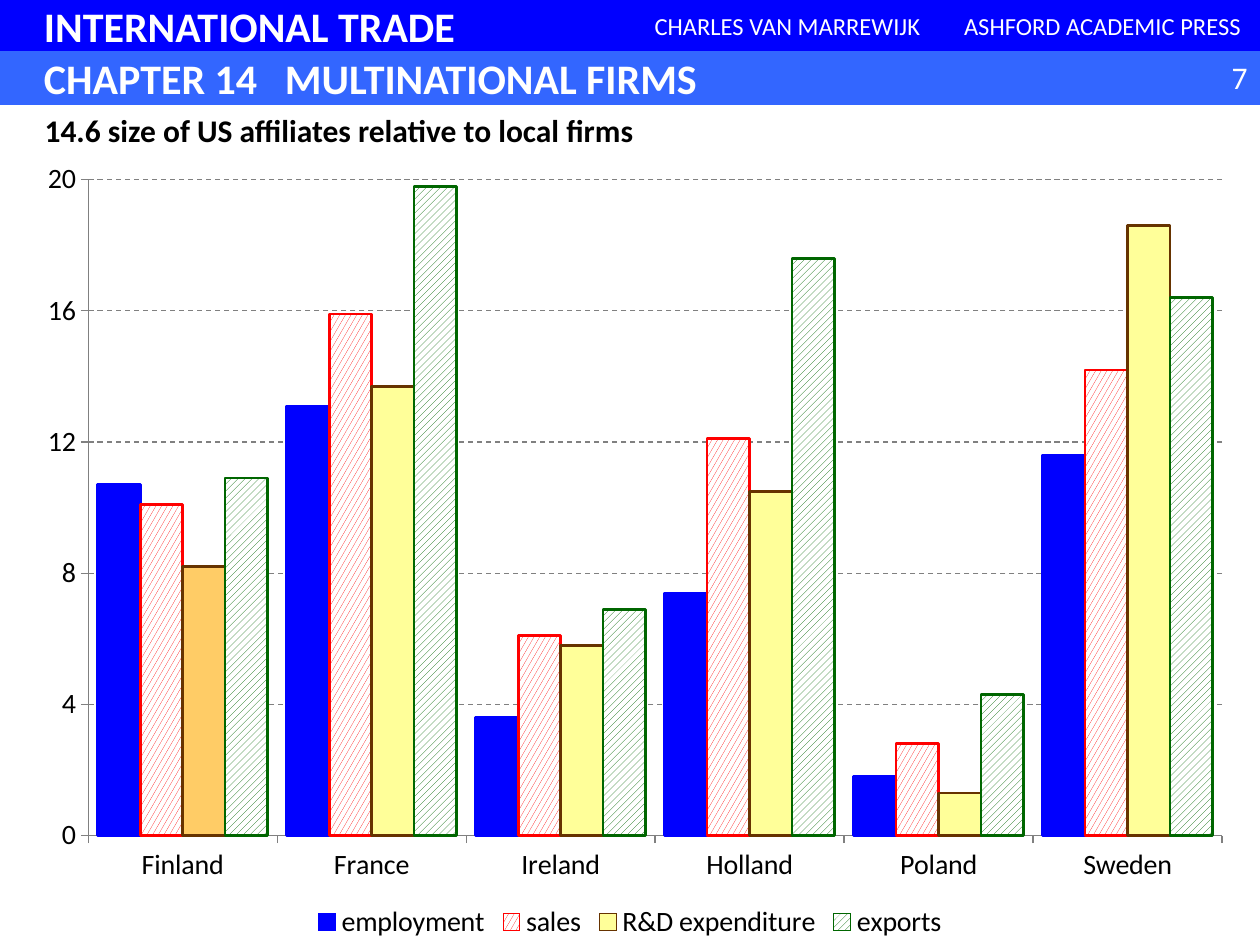
from lxml.etree import SubElement
from pptx import Presentation
from pptx.chart.data import CategoryChartData
from pptx.dml.color import RGBColor
from pptx.enum.chart import XL_CHART_TYPE, XL_LEGEND_POSITION, XL_TICK_MARK
from pptx.enum.dml import MSO_LINE, MSO_PATTERN
from pptx.enum.shapes import MSO_SHAPE
from pptx.enum.text import MSO_ANCHOR, MSO_AUTO_SIZE, PP_ALIGN
from pptx.oxml import parse_xml
from pptx.oxml.ns import nsdecls, qn
from pptx.util import Emu, Pt

WIDTH, HEIGHT = 1260, 945
BAND = 52
INDENT = 44
BLUE, LIGHT_BLUE, WHITE, BLACK, GREY = "0000FF", "3366FF", "FFFFFF", "000000", "808080"

COUNTRIES = ["Finland", "France", "Ireland", "Holland", "Poland", "Sweden"]
# name, values, fill, line, pattern
SERIES = [
    ("employment", [10.7, 13.1, 3.6, 7.4, 1.8, 11.6], BLUE, BLUE, None),
    ("sales", [10.1, 15.9, 6.1, 12.1, 2.8, 14.2], "FF0000", "FF0000",
     MSO_PATTERN.LARGE_CONFETTI),
    ("R&D expenditure", [8.2, 13.7, 5.8, 10.5, 1.3, 18.6], "FFFF99", "663300", None),
    ("exports", [10.9, 19.8, 6.9, 17.6, 4.3, 16.4], "006600", "006600",
     MSO_PATTERN.WIDE_UPWARD_DIAGONAL),
]


def px(length):
    return Emu(round(length * 914400 / 126))


def rgb(color):
    return RGBColor.from_string(color)


class SlideBuilder:
    """Holds the slide and the font shared by all its elements."""

    def __init__(self, slide, font_name="Calibri"):
        self.slide = slide
        self.font_name = font_name

    def style_font(self, font, size, color, bold=False):
        font.name = self.font_name
        font.size = Pt(size)
        font.bold = bold
        font.color.rgb = rgb(color)

    def set_text(self, shape, text, size, color, align, bold=False):
        paragraph = shape.text_frame.paragraphs[0]
        paragraph.text = text
        paragraph.alignment = align
        self.style_font(paragraph.font, size, color, bold)
        return paragraph

    def band(self, box, fill, text, size, align=PP_ALIGN.CENTER, bold=False, indent=0, tab=None):
        shape = self.slide.shapes.add_shape(MSO_SHAPE.RECTANGLE, *map(px, box))
        shape.shadow.inherit = False
        shape.fill.solid()
        shape.fill.fore_color.rgb = rgb(fill)
        shape.line.color.rgb = rgb(fill)
        shape.line.width = Pt(0.75)
        frame = shape.text_frame
        frame.vertical_anchor = MSO_ANCHOR.MIDDLE
        frame.margin_left, frame.margin_right = px(indent), 0
        paragraph = self.set_text(shape, text, size, WHITE, align, bold)
        if tab:
            properties = paragraph._p.get_or_add_pPr()
            properties.insert(0, parse_xml(
                f'<a:tabLst {nsdecls("a")}><a:tab pos="{px(tab)}" algn="l"/></a:tabLst>'))

    def label(self, box, text, size, align):
        shape = self.slide.shapes.add_textbox(*map(px, box))
        shape.text_frame.word_wrap = True
        self.set_text(shape, text, size, WHITE, align)

    def title(self, box, text, size):
        """Fills the title placeholder and brings it to the front."""
        shape = self.slide.shapes.title
        shape.left, shape.top, shape.width, shape.height = map(px, box)
        frame = shape.text_frame
        frame.word_wrap = False
        frame.auto_size = MSO_AUTO_SIZE.NONE
        frame.vertical_anchor = MSO_ANCHOR.MIDDLE
        self.set_text(shape, text, size, BLACK, PP_ALIGN.LEFT, bold=True)
        self.slide.shapes[-1].element.addnext(shape.element)

    def axis(self, axis, size):
        axis.major_tick_mark = XL_TICK_MARK.OUTSIDE
        axis.minor_tick_mark = XL_TICK_MARK.NONE
        axis.format.line.color.rgb = rgb(GREY)
        axis.format.line.width = Pt(0.75)
        self.style_font(axis.tick_labels.font, size, BLACK)

    def column_chart(self, box, size, plot_area):
        data = CategoryChartData()
        data.categories = COUNTRIES
        for name, values, *_ in SERIES:
            data.add_series(name, values)
        chart = self.slide.shapes.add_chart(
            XL_CHART_TYPE.COLUMN_CLUSTERED, *map(px, box), data).chart
        self.style_font(chart.font, size, BLACK)
        chart.has_title = False
        chart.has_legend = True
        chart.legend.position = XL_LEGEND_POSITION.BOTTOM
        chart.legend.include_in_layout = False
        self.style_font(chart.legend.font, size, BLACK)

        self.axis(chart.category_axis, size)
        value_axis = chart.value_axis
        self.axis(value_axis, size)
        value_axis.minimum_scale, value_axis.maximum_scale, value_axis.major_unit = 0, 20, 4
        value_axis.tick_labels.number_format = "0"
        value_axis.tick_labels.number_format_is_linked = False
        grid_line = value_axis.major_gridlines.format.line
        grid_line.color.rgb = rgb(GREY)
        grid_line.width = Pt(0.75)
        grid_line.dash_style = MSO_LINE.DASH

        plot = chart.plots[0]
        plot.gap_width, plot.overlap = 45, 0
        plot.vary_by_categories = False
        for series, (_, _, fill, line, pattern) in zip(plot.series, SERIES):
            self.bar_format(series.format, fill, line, pattern)
        self.bar_format(plot.series[2].points[0].format, "FFCC66", "663300")
        self.place_plot(chart, plot_area)

    def bar_format(self, bar, fill, line, pattern=None):
        if pattern:
            bar.fill.patterned()
            bar.fill.pattern = pattern
            bar.fill.back_color.rgb = rgb(WHITE)
        else:
            bar.fill.solid()
        bar.fill.fore_color.rgb = rgb(fill)
        bar.line.color.rgb = rgb(line)
        bar.line.width = Pt(1.5)

    def place_plot(self, chart, plot_area):
        """Fixes the inner plot area, given as fractions of the chart."""
        area = chart.element.find(f".//{qn('c:plotArea')}") if hasattr(chart, "element") \
            else chart._chartSpace.find(f".//{qn('c:plotArea')}")
        for old in area.findall(qn("c:layout")):
            area.remove(old)
        layout = parse_xml(f'<c:layout {nsdecls("c")}><c:manualLayout/></c:layout>')
        settings = [("layoutTarget", "inner"), ("xMode", "edge"), ("yMode", "edge"),
                    *zip("xywh", plot_area)]
        for tag, value in settings:
            SubElement(layout[0], qn(f"c:{tag}")).set("val", str(value))
        area.insert(0, layout)


def main():
    presentation = Presentation()
    presentation.slide_width, presentation.slide_height = px(WIDTH), px(HEIGHT)
    builder = SlideBuilder(presentation.slides.add_slide(presentation.slide_layouts[5]))

    quarter = WIDTH // 4
    builder.band((0, 0, WIDTH, BAND), BLUE, "INTERNATIONAL TRADE", 24,
                 PP_ALIGN.LEFT, bold=True, indent=INDENT)
    for column, credit in enumerate(["CHARLES VAN MARREWIJK", "ASHFORD ACADEMIC PRESS"], 2):
        builder.band((column * quarter, 0, quarter, BAND), BLUE, credit, 14)
    builder.band((0, BAND, WIDTH, BAND), LIGHT_BLUE, "CHAPTER 14\tMULTINATIONAL FIRMS", 24,
                 PP_ALIGN.LEFT, bold=True, indent=INDENT, tab=241)
    builder.label((1176, BAND, 84, BAND), "7", 18, PP_ALIGN.RIGHT)
    builder.column_chart((0, 2 * BAND, WIDTH, HEIGHT - 2 * BAND), 16, (0.07, 0.09, 0.9, 0.78))
    builder.title((32, 2 * BAND, 638, 52), "14.6 size of US affiliates relative to local firms", 18)
    presentation.save("out.pptx")


if __name__ == "__main__":
    main()
